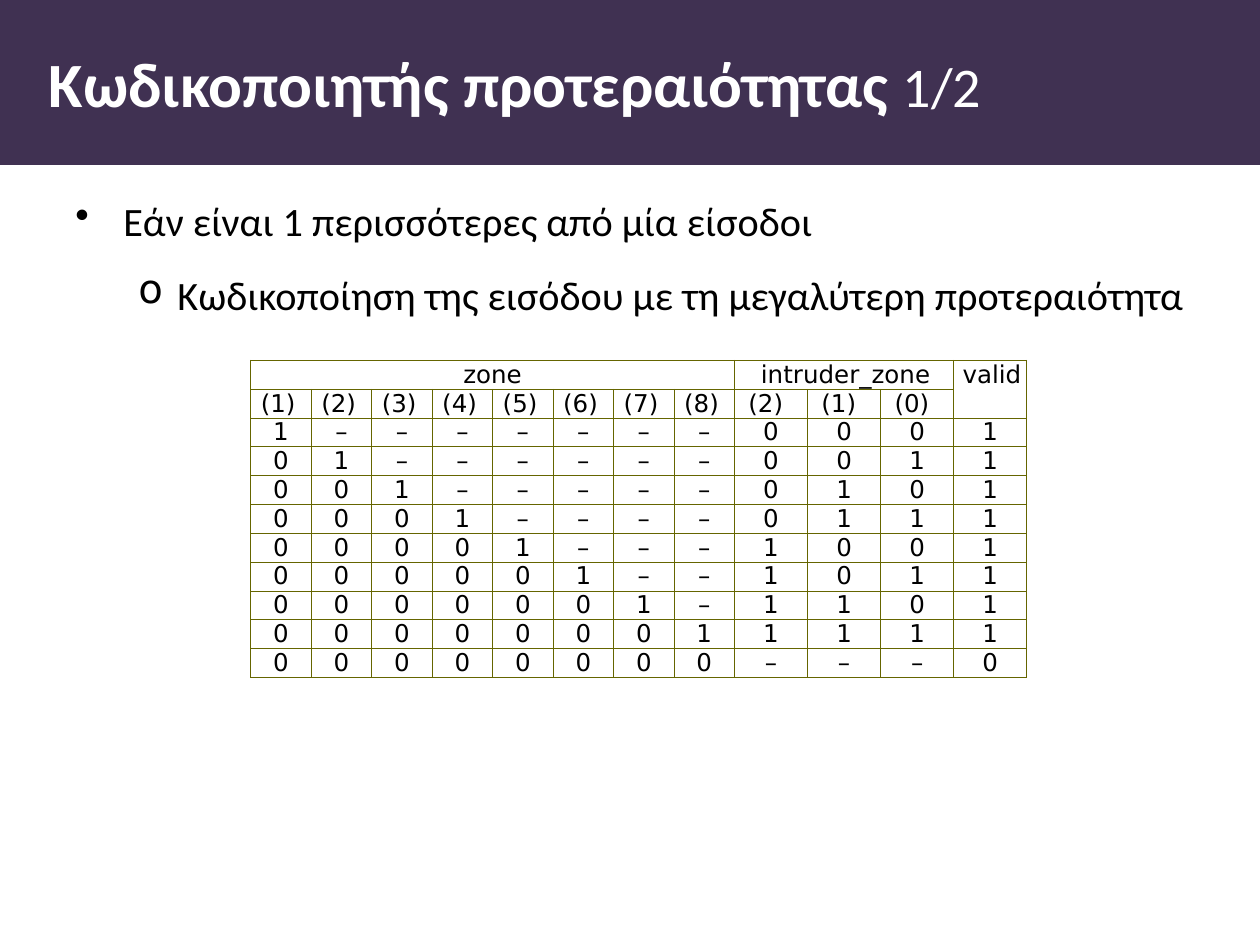
from lxml import etree
from pptx import Presentation
from pptx.dml.color import RGBColor
from pptx.enum.shapes import MSO_SHAPE
from pptx.enum.text import MSO_ANCHOR, PP_ALIGN
from pptx.oxml.ns import qn
from pptx.util import Inches, Pt

RECTANGLE = MSO_SHAPE.RECTANGLE
MIDDLE = MSO_ANCHOR.MIDDLE
LEFT, CENTER = PP_ALIGN.LEFT, PP_ALIGN.CENTER
PURPLE = RGBColor(0x40, 0x31, 0x52)
OLIVE = RGBColor(0x65, 0x65, 0x00)
WHITE = RGBColor(0xFF, 0xFF, 0xFF)
BLACK = RGBColor(0x00, 0x00, 0x00)

ZONES = 8
CODE_BITS = 3
COLUMNS = ZONES + CODE_BITS + 1
VALID_COLUMN = COLUMNS - 1
DASH = "–"


def add_run(paragraph, text, font_name, size, color, bold=False):
    run = paragraph.add_run()
    run.text = text
    run.font.name = font_name
    run.font.size = Pt(size)
    run.font.color.rgb = color
    run.font.bold = bold


def set_indent(paragraph, margin, first_line=0):
    properties = paragraph._p.get_or_add_pPr()
    properties.set("marL", str(Inches(margin)))
    properties.set("indent", str(Inches(first_line)))


presentation = Presentation()
presentation.slide_width = Inches(10)
presentation.slide_height = Inches(7.5)
slide = presentation.slides.add_slide(presentation.slide_layouts[6])

# Truth table: each row maps the first active zone to its binary code
header = {(0, 0): ("zone", None), (0, ZONES): ("intruder_zone", 0.21),
          (0, VALID_COLUMN): ("valid", 0.07)}
for column in range(ZONES):
    header[1, column] = (f"({column + 1})", 0.08)
for bit in range(CODE_BITS):
    header[1, ZONES + bit] = (f"({CODE_BITS - 1 - bit})", 0.11)

cells = dict(header)
for zone in range(ZONES):
    values = "0" * zone + "1" + DASH * (ZONES - 1 - zone) + f"{zone:03b}" + "1"
    for column, value in enumerate(values):
        cells[zone + 2, column] = (value, None)
for column, value in enumerate("0" * ZONES + DASH * CODE_BITS + "0"):
    cells[ZONES + 2, column] = (value, None)

row_count = ZONES + 3
frame = slide.shapes.add_table(row_count, COLUMNS, Inches(1.99), Inches(2.86),
                               Inches(6.16), Inches(2.57))
table = frame.table
table.first_row = False
table.horz_banding = False
for index, column in enumerate(table.columns):
    column.width = Inches(0.48 if index < ZONES else 0.58)
for row in table.rows:
    row.height = Inches(0.18)
frame.height = Inches(2.57)

table.cell(0, 0).merge(table.cell(0, ZONES - 1))
table.cell(0, ZONES).merge(table.cell(0, VALID_COLUMN - 1))
table.cell(0, VALID_COLUMN).merge(table.cell(1, VALID_COLUMN))

for row_index in range(row_count):
    for column_index in range(COLUMNS):
        cell = table.cell(row_index, column_index)
        cell.margin_left = cell.margin_right = 0
        cell.margin_top = cell.margin_bottom = 0
        cell_properties = cell._tc.get_or_add_tcPr()
        for side in ("a:lnL", "a:lnR", "a:lnT", "a:lnB"):
            border = etree.SubElement(cell_properties, qn(side), w=str(Pt(0.5)))
            fill = etree.SubElement(border, qn("a:solidFill"))
            etree.SubElement(fill, qn("a:srgbClr"), val=str(OLIVE))
        cell.fill.background()

for (row_index, column_index), (text, margin) in cells.items():
    paragraph = table.cell(row_index, column_index).text_frame.paragraphs[0]
    if margin is None:
        paragraph.alignment = CENTER
    else:
        set_indent(paragraph, margin)
    add_run(paragraph, text, "DejaVu Sans", 14, BLACK)

# Title band
title = slide.shapes.add_shape(RECTANGLE, 0, 0, Inches(10), Inches(1.31))
title.shadow.inherit = False
title.fill.solid()
title.fill.fore_color.rgb = PURPLE
title.line.fill.background()
title.text_frame.word_wrap = True
title.text_frame.vertical_anchor = MIDDLE
paragraph = title.text_frame.paragraphs[0]
paragraph.alignment = LEFT
set_indent(paragraph, 0.29)
add_run(paragraph, "Κωδικοποιητής προτεραιότητας ", "Calibri", 36, WHITE, bold=True)
add_run(paragraph, "1/2", "Calibri", 32, WHITE)

# Bulleted text
body = slide.shapes.add_textbox(Inches(0.5), Inches(1.47), Inches(9.15), Inches(1.26))
body_frame = body.text_frame
body_frame.word_wrap = True
bullets = [
    (0, "•", 0.38, -0.38, "Εάν είναι 1 περισσότερες από µία είσοδοι"),
    (1, "o", 0.81, -0.31, "Κωδικοποίηση της εισόδου µε τη µεγαλύτερη προτεραιότητα"),
]
for level, bullet, margin, first_line, text in bullets:
    paragraph = body_frame.add_paragraph() if level else body_frame.paragraphs[0]
    paragraph.level = level
    paragraph.line_spacing = 1.1
    paragraph.space_before = Pt(12)
    set_indent(paragraph, margin, first_line)
    etree.SubElement(paragraph._p.get_or_add_pPr(), qn("a:buChar"), char=bullet)
    add_run(paragraph, text, "Calibri", 23, BLACK)

presentation.save("out.pptx")
